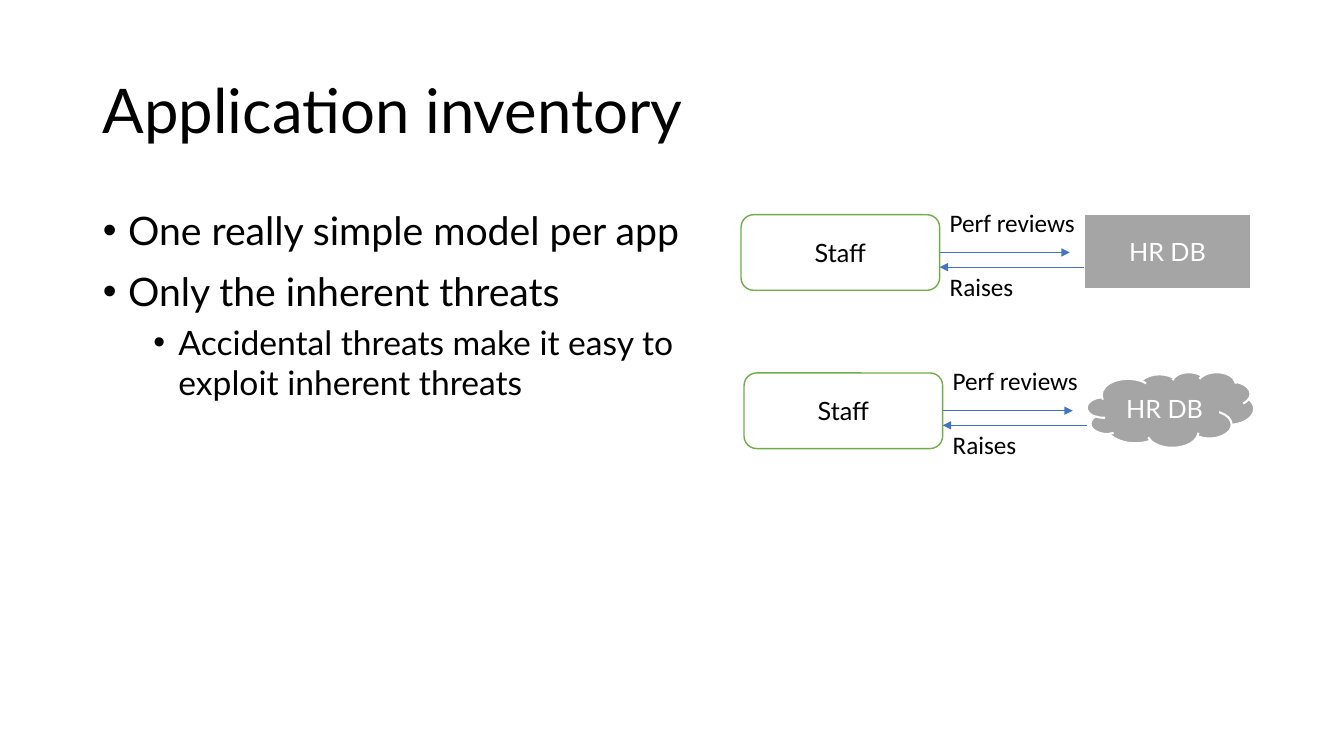
from lxml import etree
from pptx import Presentation
from pptx.dml.color import RGBColor
from pptx.enum.shapes import MSO_CONNECTOR, MSO_SHAPE
from pptx.enum.text import MSO_ANCHOR, MSO_AUTO_SIZE, PP_ALIGN
from pptx.oxml.ns import qn
from pptx.util import Inches, Pt

COLORS = {
    "text": "000000",
    "white": "FFFFFF",
    "staff_line": "70AD47",
    "database": "A5A5A5",
    "flow": "4472C4",
}
BULLETS = [
    ("One really simple model per app", 0),
    ("Only the inherent threats", 0),
    ("Accidental threats make it easy to exploit inherent threats", 1),
]
# Size, left indent and space before of each bullet level
LEVELS = [(28, 0.25, 10), (24, 0.75, 5)]


def color(name):
    return RGBColor.from_string(COLORS[name])


def set_font(para, size, name="Lato", ink="text"):
    para.font.size = Pt(size)
    para.font.name = name
    para.font.color.rgb = color(ink)


def place(shape, left, top, width, height):
    shape.left, shape.top = Inches(left), Inches(top)
    shape.width, shape.height = Inches(width), Inches(height)


def fill_title(title):
    place(title, 0.92, 0.4, 11.5, 1.45)
    frame = title.text_frame
    frame.text = "Application inventory"
    frame.auto_size = MSO_AUTO_SIZE.NONE
    frame.vertical_anchor = MSO_ANCHOR.MIDDLE
    para = frame.paragraphs[0]
    para.alignment = PP_ALIGN.LEFT
    para.line_spacing = 0.9
    set_font(para, 44)


def fill_bullets(body):
    place(body, 0.92, 2, 6.17, 4.76)
    frame = body.text_frame
    frame.text = "\n".join(text for text, level in BULLETS)
    frame.auto_size = MSO_AUTO_SIZE.NONE
    for index, (para, (text, level)) in enumerate(zip(frame.paragraphs, BULLETS)):
        size, indent, space = LEVELS[level]
        para.level = level
        para.space_before = Pt(space if index else 0)
        props = para._p.get_or_add_pPr()
        props.set("marL", str(Inches(indent)))
        props.set("indent", str(Inches(-0.25)))
        etree.SubElement(props, qn("a:buFont"), typeface="Arial")
        etree.SubElement(props, qn("a:buChar"), char="•")
        set_font(para, size)


def add_node(page, kind, text, box, fill, line, width, ink):
    node = page.shapes.add_shape(kind, *map(Inches, box))
    node.shadow.inherit = False
    node.fill.solid()
    node.fill.fore_color.rgb = color(fill)
    node.line.color.rgb = color(line)
    node.line.width = Pt(width)
    frame = node.text_frame
    frame.text = text
    frame.vertical_anchor = MSO_ANCHOR.MIDDLE
    frame.paragraphs[0].alignment = PP_ALIGN.CENTER
    set_font(frame.paragraphs[0], 18, ink=ink)
    return node


def add_arrow(page, start, end, y):
    arrow = page.shapes.add_connector(
        MSO_CONNECTOR.STRAIGHT, Inches(start), Inches(y), Inches(end), Inches(y))
    arrow.line.color.rgb = color("flow")
    arrow.line.width = Pt(0.5)
    etree.SubElement(arrow.line._get_or_add_ln(), qn("a:tailEnd"), type="triangle")
    etree.SubElement(arrow._element.spPr, qn("a:effectLst"))
    return arrow


def add_label(page, text, left, top, width):
    label = page.shapes.add_textbox(
        Inches(left), Inches(top), Inches(width), Inches(0.4))
    frame = label.text_frame
    frame.text = text
    frame.word_wrap = False
    frame.auto_size = MSO_AUTO_SIZE.SHAPE_TO_FIT_TEXT
    set_font(frame.paragraphs[0], 18, "Calibri")


def add_model(page, left, top, database_kind):
    """Staff and the HR database, with one data flow each way."""
    staff = add_node(page, MSO_SHAPE.ROUNDED_RECTANGLE, "Staff",
                     (left, top + 0.01, 1.97, 0.75),
                     "white", "staff_line", 1, "text")
    add_node(page, database_kind, "HR DB", (left + 3.4, top, 1.66, 0.75),
             "database", "white", 1.5, "white")

    staff_edge = left + 1.97
    reviews = add_arrow(page, staff_edge, left + 3.26, top + 0.385)
    reviews.begin_connect(staff, 3)
    add_label(page, "Perf reviews", staff_edge, top - 0.11, 1.46)
    add_arrow(page, left + 3.4, staff_edge, top + 0.53)
    add_label(page, "Raises", staff_edge, top + 0.52, 0.84)


def main():
    deck = Presentation()
    deck.slide_width, deck.slide_height = Inches(13.33), Inches(7.5)
    page = deck.slides.add_slide(deck.slide_layouts[1])

    # Title and bullets
    fill_title(page.shapes.title)
    fill_bullets(page.placeholders[1])

    # Two versions of the model
    add_model(page, 7.35, 2.12, MSO_SHAPE.RECTANGLE)
    add_model(page, 7.38, 3.69, MSO_SHAPE.CLOUD)

    deck.save("out.pptx")


if __name__ == "__main__":
    main()
